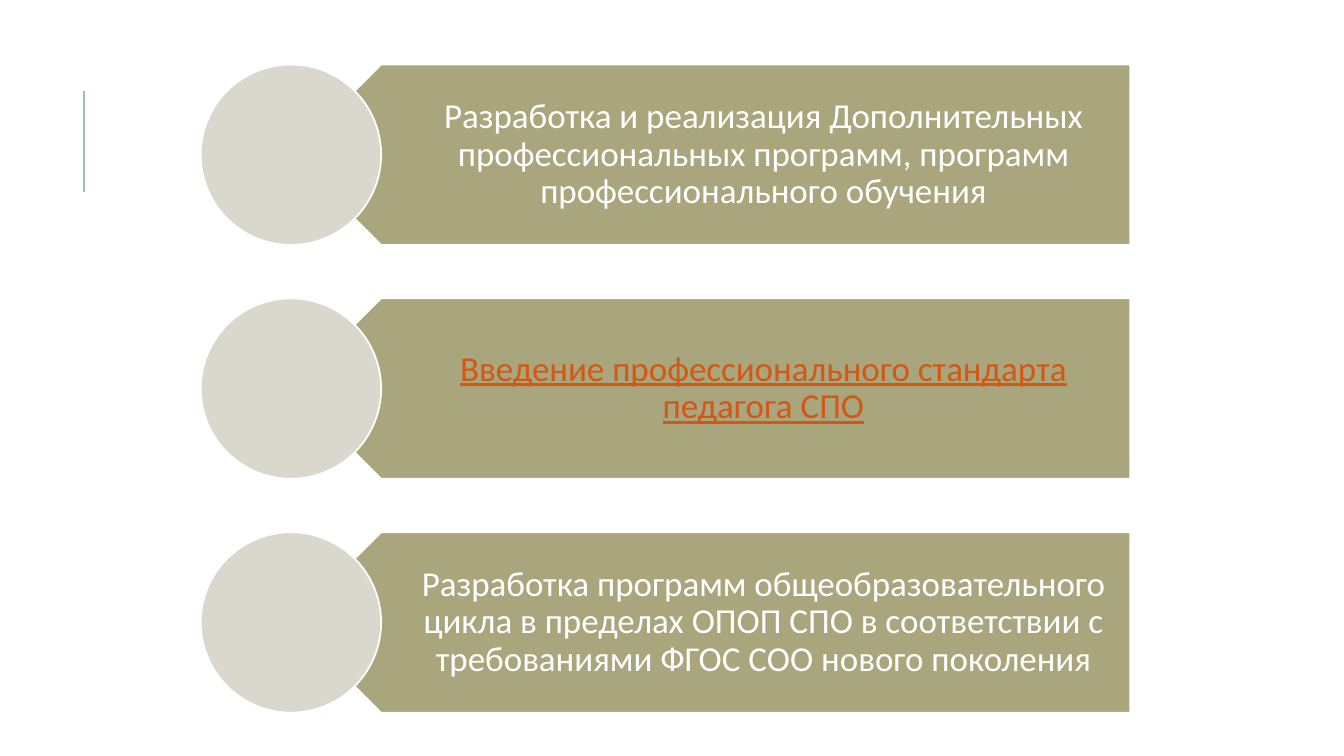
from dataclasses import dataclass

from lxml.etree import SubElement
from pptx import Presentation
from pptx.dml.color import RGBColor
from pptx.enum.shapes import MSO_CONNECTOR, MSO_SHAPE
from pptx.enum.text import MSO_ANCHOR, PP_ALIGN
from pptx.oxml.ns import qn
from pptx.util import Inches, Pt


@dataclass(frozen=True)
class Theme:
    font: str = "Calibri"
    text_size: float = 25
    outline_width: float = 1.25
    accent_width: float = 1.5
    white: str = "FFFFFF"
    link: str = "D25814"
    arrow: str = "A9A57C"
    circle: str = "DAD8CC"
    accent: str = "9CBEBD"


THEME = Theme()

DIRECTIONS = [
    ("Разработка и реализация Дополнительных профессиональных программ, "
     "программ профессионального обучения", False),
    ("Введение профессионального стандарта педагога СПО", True),
    ("Разработка программ общеобразовательного цикла в пределах ОПОП СПО "
     "в соответствии с требованиями ФГОС СОО нового поколения", False),
]

SLIDE_WIDTH, SLIDE_HEIGHT = 13.33, 7.5
ROW_TOP, ROW_PITCH, ROW_HEIGHT = 0.64, 2.32, 1.79
CIRCLE_LEFT = 1.99
ARROW_LEFT = CIRCLE_LEFT + ROW_HEIGHT / 2
ARROW_RIGHT = 11.21
TEXT_LEFT = ARROW_LEFT + ROW_HEIGHT / 4
ACCENT_X, ACCENT_TOP, ACCENT_BOTTOM = 0.83, 0.9, 1.9


def color(value):
    return RGBColor.from_string(value)


def add_accent(slide):
    line = slide.shapes.add_connector(
        MSO_CONNECTOR.STRAIGHT, Inches(ACCENT_X), Inches(ACCENT_BOTTOM),
        Inches(ACCENT_X), Inches(ACCENT_TOP))
    line.line.color.rgb = color(THEME.accent)
    line.line.width = Pt(THEME.accent_width)
    SubElement(line._element.spPr, qn("a:effectLst"))


def add_outlined(slide, preset, left, top, width, fill):
    shape = slide.shapes.add_shape(
        preset, Inches(left), Inches(top), Inches(width), Inches(ROW_HEIGHT))
    shape.shadow.inherit = False
    shape.fill.solid()
    shape.fill.fore_color.rgb = color(fill)
    shape.line.color.rgb = color(THEME.white)
    shape.line.width = Pt(THEME.outline_width)
    return shape


def add_label(slide, top, text, is_link):
    box = slide.shapes.add_textbox(
        Inches(TEXT_LEFT), Inches(top),
        Inches(ARROW_RIGHT - TEXT_LEFT), Inches(ROW_HEIGHT))
    frame = box.text_frame
    frame.word_wrap = True
    frame.vertical_anchor = MSO_ANCHOR.MIDDLE
    frame.margin_left, frame.margin_right = Inches(0.79), Inches(0.19)
    frame.margin_top = frame.margin_bottom = Inches(0.1)
    paragraph = frame.paragraphs[0]
    paragraph.text = text
    paragraph.alignment = PP_ALIGN.CENTER
    paragraph.line_spacing = 0.9
    paragraph.font.name = THEME.font
    paragraph.font.size = Pt(THEME.text_size)
    paragraph.font.underline = is_link
    paragraph.font.color.rgb = color(THEME.link if is_link else THEME.white)


def main():
    presentation = Presentation()
    presentation.slide_width = Inches(SLIDE_WIDTH)
    presentation.slide_height = Inches(SLIDE_HEIGHT)
    slide = presentation.slides.add_slide(presentation.slide_layouts[6])
    add_accent(slide)
    for row, (text, is_link) in enumerate(DIRECTIONS):
        top = ROW_TOP + row * ROW_PITCH
        arrow = add_outlined(slide, MSO_SHAPE.PENTAGON, ARROW_LEFT, top,
                             ARROW_RIGHT - ARROW_LEFT, THEME.arrow)
        arrow.rotation = 180
        add_label(slide, top, text, is_link)
        add_outlined(slide, MSO_SHAPE.OVAL, CIRCLE_LEFT, top, ROW_HEIGHT, THEME.circle)
    presentation.save("out.pptx")


if __name__ == "__main__":
    main()
